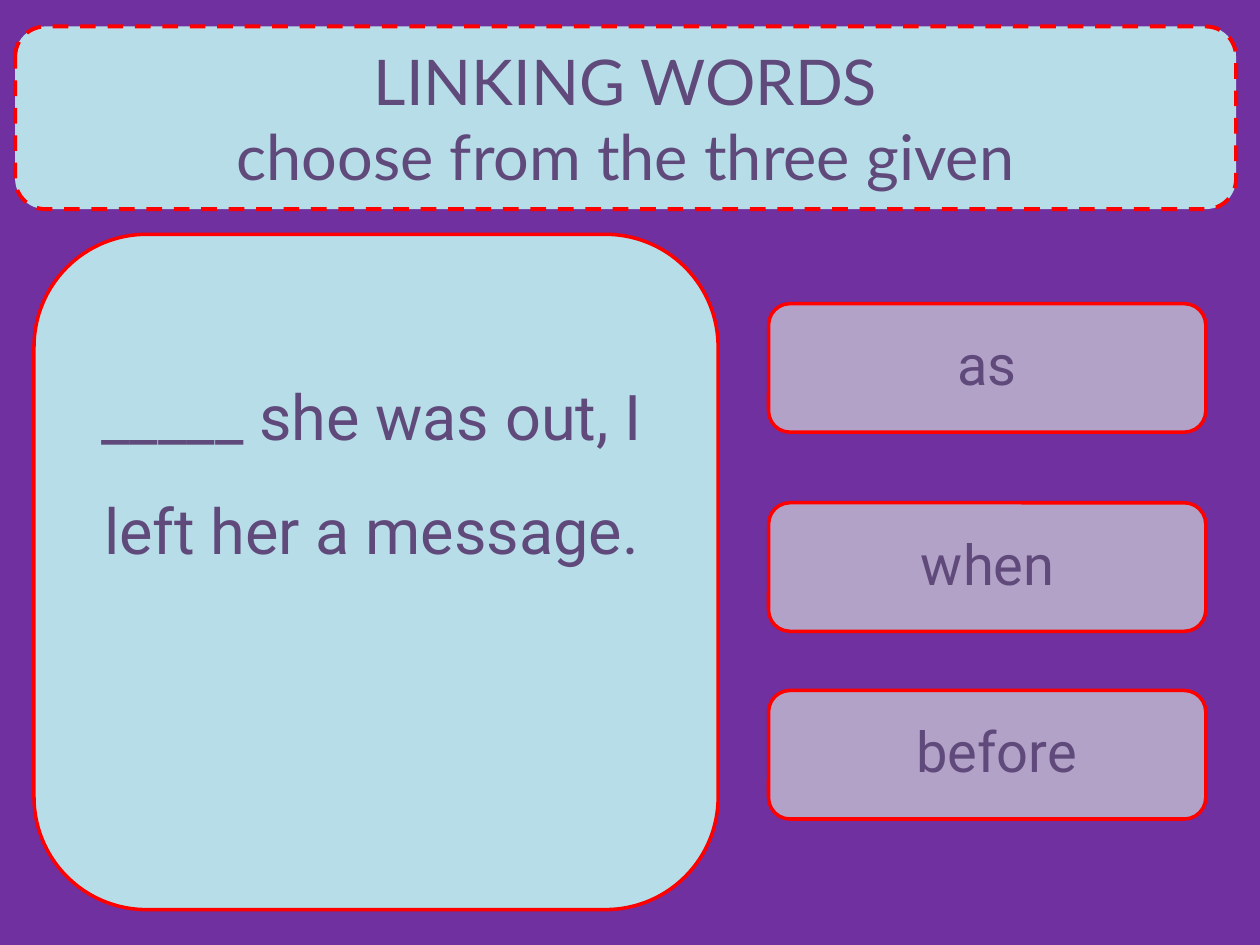
import pptx
from pptx.dml.color import RGBColor
from pptx.enum.dml import MSO_LINE
from pptx.enum.shapes import MSO_SHAPE
from pptx.enum.text import MSO_ANCHOR, PP_ALIGN
from pptx.util import Inches, Pt

PURPLE = RGBColor(0x70, 0x30, 0xA0)
PALE_BLUE = RGBColor(0xB7, 0xDE, 0xE8)
LILAC = RGBColor(0xB3, 0xA2, 0xC7)
RED = RGBColor(0xFF, 0x00, 0x00)
INK = RGBColor(0x60, 0x4A, 0x7B)

TITLE = ["LINKING WORDS", "choose from the three given"]
SENTENCE = ["_____ she was out, I left her a message."]
# word, top of its card, left and width of its label
CHOICES = [
    ("as", 2.41, 6.1, 3.47),
    ("when", 3.99, 6.5, 2.68),
    ("before", 5.48, 6.57, 2.68),
]

BANNER = (0.12, 0.21, 9.69, 1.45)
PANEL = (0.27, 1.86, 5.43, 5.36)
SENTENCE_BOX = (0.59, 2.65, 4.72, 3.74)
CARD_LEFT, CARD_WIDTH, CARD_HEIGHT = 6.1, 3.47, 1.02
LABEL_OFFSET, LABEL_HEIGHT = 0.16, 0.64


def add_card(s, box, fill, line_width=2, dash=None):
    sp = s.shapes.add_shape(MSO_SHAPE.ROUNDED_RECTANGLE, *map(Inches, box))
    sp.shadow.inherit = False
    sp.fill.solid()
    sp.fill.fore_color.rgb = fill
    sp.line.color.rgb = RED
    sp.line.width = Pt(line_width)
    if dash is not None:
        sp.line.dash_style = dash


def write(tf, lines, font, size, spacing=1.0):
    tf.word_wrap = True
    tf.text = "\n".join(lines)
    for p in tf.paragraphs:
        p.alignment = PP_ALIGN.CENTER
        p.line_spacing = spacing
        for r in p.runs:
            for name, value in {"name": font, "size": Pt(size)}.items():
                setattr(r.font, name, value)
            r.font.color.rgb = INK


def add_text(s, box, lines, size, spacing=1.0):
    tf = s.shapes.add_textbox(*map(Inches, box)).text_frame
    write(tf, lines, "Roboto", size, spacing)


def place_title(s):
    """Move the title placeholder onto the banner, in front of it."""
    title = s.shapes.title
    for side, value in zip(("left", "top", "width", "height"), BANNER):
        setattr(title, side, Inches(value))
    title.text_frame.vertical_anchor = MSO_ANCHOR.MIDDLE
    write(title.text_frame, TITLE, "Lato", 36)
    s.shapes._spTree.append(title._element)


def main():
    prs = pptx.Presentation()
    prs.slide_width, prs.slide_height = Inches(10), Inches(7.5)
    s = prs.slides.add_slide(prs.slide_layouts[5])
    s.background.fill.solid()
    s.background.fill.fore_color.rgb = PURPLE

    add_card(s, PANEL, PALE_BLUE)
    for word, top, left, width in CHOICES:
        add_card(s, (CARD_LEFT, top, CARD_WIDTH, CARD_HEIGHT), LILAC)
        add_text(s, (left, top + LABEL_OFFSET, width, LABEL_HEIGHT), [word], 32)
    add_card(s, BANNER, PALE_BLUE, 2.25, MSO_LINE.DASH)
    place_title(s)
    add_text(s, SENTENCE_BOX, SENTENCE, 36, 1.5)
    prs.save("out.pptx")


if __name__ == "__main__":
    main()
